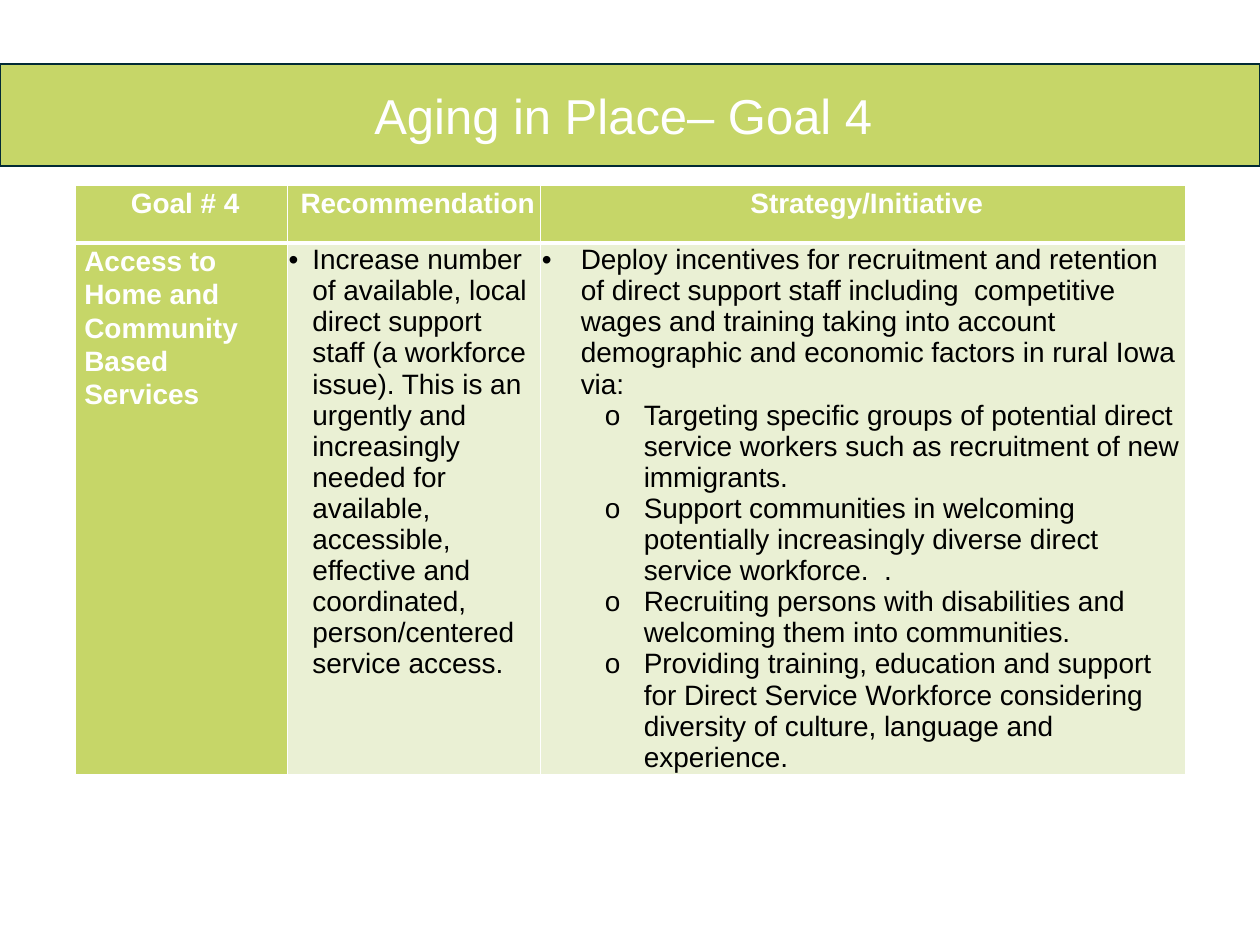
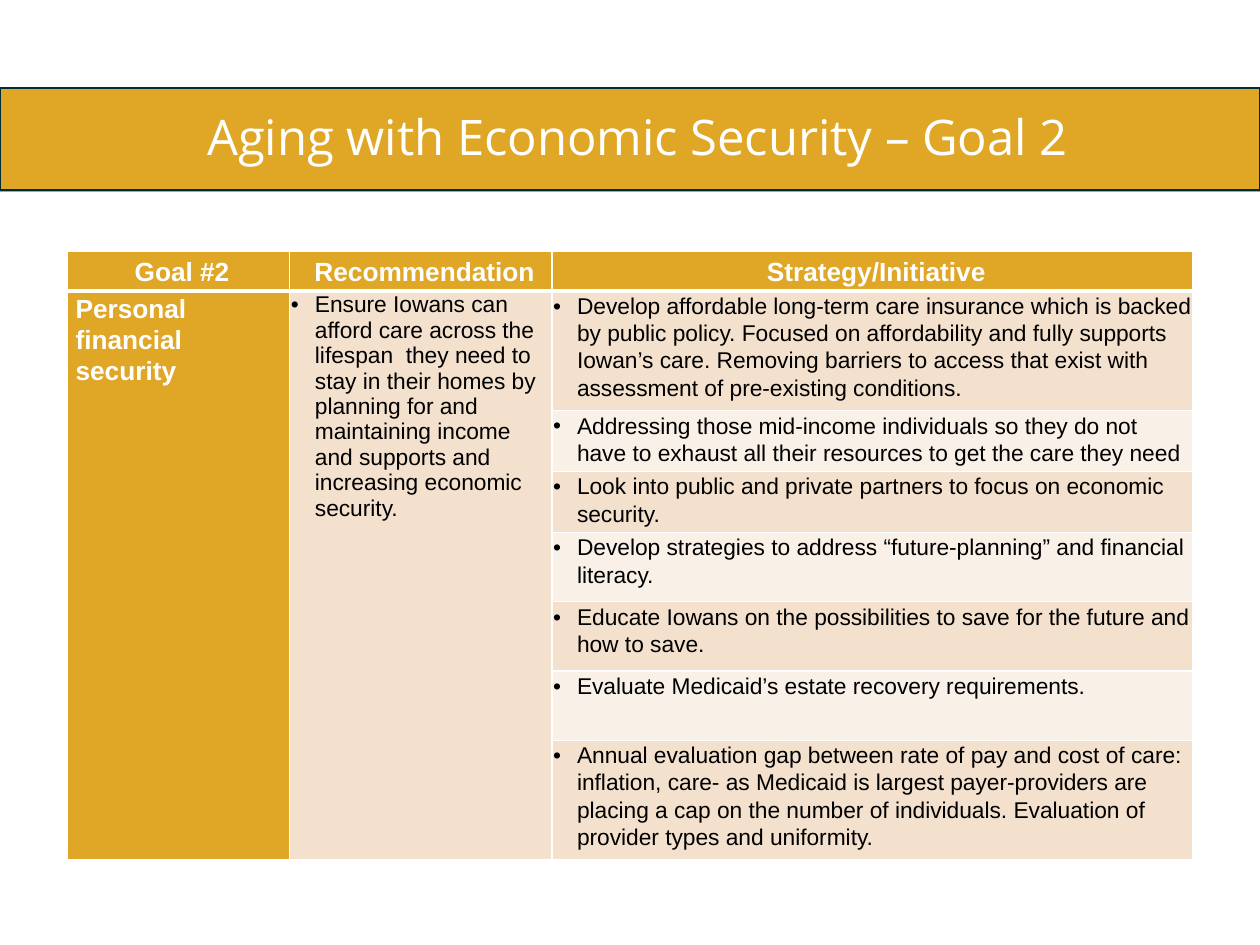
import pptx
import pptx.dml.color
import pptx.enum.shapes
import pptx.enum.text
import pptx.util
from lxml import etree
from pptx.oxml.ns import qn

Inches = pptx.util.Inches
Pt = pptx.util.Pt
ALIGN = pptx.enum.text.PP_ALIGN
ANCHOR = pptx.enum.text.MSO_ANCHOR

# Shared look
WHITE, BLACK, BAND_EDGE = "FFFFFF", "000000", "022B35"
GREEN, GREEN_TINT = "C6D668", "EAF0D4"
GOLD, GOLD_TINT, GOLD_PALE = "E0A626", "F3E1CD", "F9F1E8"
BAND_HEIGHT = 0.81
CELL_MARGIN = 0.01
LOOSE = 1.07  # line spacing of headings and strategy rows


def color(hex_code):
    return pptx.dml.color.RGBColor.from_string(hex_code)


def paint(target, hex_code):
    target.fill.solid()
    target.fill.fore_color.rgb = color(hex_code)


def write(frame, text, *, first=True, size=16, font="Arial", ink=BLACK, bold=False,
          align=ALIGN.LEFT, spacing=None, after=None, left=0, hang=0, bullet=None, level=0):
    """Write one paragraph into a text frame."""
    paragraph = frame.paragraphs[0] if first else frame.add_paragraph()
    paragraph.alignment = align
    paragraph.level = level
    properties = paragraph._p.get_or_add_pPr()
    properties.set("marL", str(Inches(left)))
    properties.set("indent", str(Inches(-hang)))
    if bullet:
        etree.SubElement(properties, qn("a:buFont"), typeface="Arial")
        etree.SubElement(properties, qn("a:buChar"), char=bullet)
    if spacing:
        paragraph.line_spacing = spacing
    if after:
        paragraph.space_after = Pt(after)
    run = paragraph.add_run()
    run.text = text
    run.font.size, run.font.name, run.font.bold = Pt(size), font, bold
    run.font.color.rgb = color(ink)


def add_band(slide, top, fill, edge=None):
    """Full-width title band."""
    band = slide.shapes.add_shape(pptx.enum.shapes.MSO_SHAPE.RECTANGLE, Inches(0), Inches(top),
                                  Inches(10), Inches(BAND_HEIGHT))
    band.shadow.inherit = False
    paint(band, fill)
    if edge:
        band.line.color.rgb = color(edge)
        band.line.width = Pt(1)
    else:
        band.line.fill.background()
    return band


def write_title(frame, text, **style):
    frame.word_wrap = True
    frame.vertical_anchor = ANCHOR.MIDDLE
    write(frame, text, size=28, ink=WHITE, align=ALIGN.CENTER, **style)


def style_cell(cell, fill, bottom_width=1, anchor=ANCHOR.TOP):
    """Margins, white borders and fill of one table cell."""
    cell.margin_left = cell.margin_right = Inches(CELL_MARGIN)
    cell.margin_top = cell.margin_bottom = Inches(CELL_MARGIN)
    cell.vertical_anchor = anchor
    properties = cell._tc.get_or_add_tcPr()
    for side, width in (("L", 1), ("R", 1), ("T", 1), ("B", bottom_width)):
        border = etree.SubElement(properties, qn(f"a:ln{side}"), w=str(Pt(width)))
        solid = etree.SubElement(border, qn("a:solidFill"))
        etree.SubElement(solid, qn("a:srgbClr"), val=WHITE)
    paint(cell, fill)


def add_goal_table(slide, left, top, widths, heights, headings, goal, accent, tints,
                   heading_size, anchor):
    """Table with a heading row and a goal column; tints alternate down the strategy rows."""
    table = slide.shapes.add_table(len(heights), len(widths), Inches(left), Inches(top),
                                   Inches(sum(widths)), Inches(sum(heights))).table
    table.horz_banding = False
    for column, width in zip(table.columns, widths):
        column.width = Inches(width)
    for row, height in zip(table.rows, heights):
        row.height = Inches(height)

    heading_style = dict(size=heading_size, ink=WHITE, bold=True, spacing=LOOSE, left=0.06)
    for index, heading in enumerate(headings):
        cell = table.cell(0, index)
        style_cell(cell, accent, bottom_width=3, anchor=anchor)
        write(cell.text_frame, heading, align=ALIGN.CENTER, **heading_style)

    for row in range(1, len(heights)):
        for index, fill in enumerate((accent, tints[0], tints[(row - 1) % len(tints)])):
            style_cell(table.cell(row, index), fill)
    if len(heights) > 2:
        for index in (0, 1):
            table.cell(1, index).merge(table.cell(len(heights) - 1, index))
    write(table.cell(1, 0).text_frame, goal, **heading_style)
    return table


def add_aging_in_place(slide):
    table = add_goal_table(
        slide, 0.6, 1.47, (1.68, 2.01, 5.12), (0.46, 4.2),
        ("Goal # 4", "Recommendation", "Strategy/Initiative"),
        "Access to Home and Community Based Services",
        GREEN, (GREEN_TINT,), 16, ANCHOR.TOP)
    write(table.cell(1, 1).text_frame,
          "Increase number of available, local direct support staff (a workforce issue). "
          "This is an urgently and increasingly needed for available, accessible, effective "
          "and  coordinated, person/centered service access.",
          left=0.19, hang=0.19, bullet="•")

    strategy = table.cell(1, 2).text_frame
    write(strategy,
          "Deploy incentives for recruitment and retention of direct support staff including  "
          "competitive wages and training taking into account demographic and economic factors "
          "in rural Iowa via:", left=0.31, hang=0.31, bullet="•")
    for step in (
        "Targeting specific groups of potential direct service workers such as recruitment "
        "of new immigrants.",
        "Support communities in welcoming potentially increasingly diverse direct service "
        "workforce.  .",
        "Recruiting persons with disabilities and welcoming them into communities.",
        "Providing training, education and support for Direct Service Workforce considering "
        "diversity of culture, language and experience.",
    ):
        write(strategy, step, first=False, left=0.81, hang=0.31, bullet="o", level=1)

    band = add_band(slide, 0.51, GREEN, BAND_EDGE)
    write_title(band.text_frame, "Aging in Place– Goal 4 ")


def add_economic_security(slide):
    add_band(slide, 0.71, BLACK)
    add_band(slide, 0.7, GOLD, BAND_EDGE)
    title = slide.shapes.add_textbox(Inches(0.46), Inches(0.7), Inches(9.2), Inches(BAND_HEIGHT))
    write_title(title.text_frame, "Aging with Economic Security – Goal 2",
                font="Open Sans", spacing=0.9)

    table = add_goal_table(
        slide, 0.53, 1.99, (1.77, 2.08, 5.09),
        (0.32, 0.87, 0.48, 0.46, 0.55, 0.55, 0.55, 0.87),
        ("Goal #2", "Recommendation", "Strategy/Initiative"),
        "Personal financial security",
        GOLD, (GOLD_TINT, GOLD_PALE), 15, ANCHOR.MIDDLE)
    bullet_style = dict(size=13, left=0.19, hang=0.19, bullet="•")
    write(table.cell(1, 1).text_frame,
          "Ensure Iowans can afford care across the lifespan  they need to stay in their homes "
          "by planning for and maintaining income and supports and increasing economic security.",
          **bullet_style)

    strategies = (
        "Develop affordable long-term care insurance which is backed by public policy. Focused "
        "on affordability and fully supports Iowan’s care. Removing barriers to access that "
        "exist with assessment of pre-existing conditions.",
        "Addressing those mid-income individuals so they do not have to exhaust all their "
        "resources to get the care they need",
        "Look into public and private partners to focus on economic security.",
        "Develop strategies to address “future-planning” and financial literacy.",
        "Educate Iowans on the possibilities to save for the future and how to save.",
        "Evaluate Medicaid’s estate recovery requirements.",
        "Annual evaluation gap between rate of pay and cost of care: inflation, care- as "
        "Medicaid is largest payer-providers are placing a cap on the number of individuals. "
        "Evaluation of provider types and uniformity.",
    )
    for row, strategy in enumerate(strategies, start=1):
        write(table.cell(row, 2).text_frame, strategy, spacing=LOOSE, after=6, **bullet_style)


def main():
    deck = pptx.Presentation()
    deck.slide_width, deck.slide_height = Inches(10), Inches(7.5)
    blank = deck.slide_layouts[6]
    for build in (add_aging_in_place, add_economic_security):
        build(deck.slides.add_slide(blank))
    deck.save("out.pptx")


if __name__ == "__main__":
    main()
